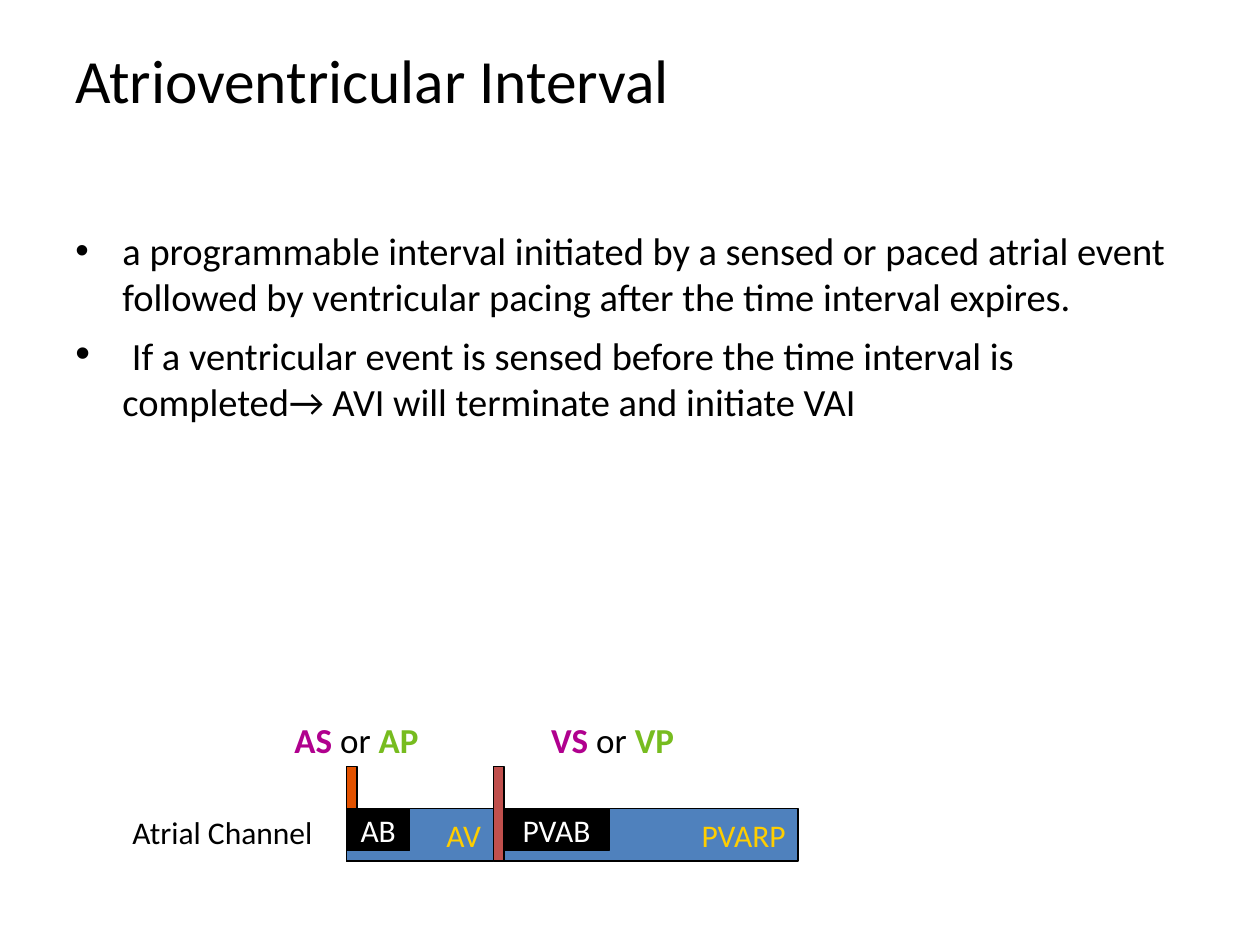
"""Build the atrioventricular interval slide with its atrial channel timing diagram."""
from lxml.etree import SubElement
from pptx import Presentation
from pptx.dml.color import RGBColor
from pptx.enum.shapes import MSO_SHAPE
from pptx.enum.text import MSO_ANCHOR, PP_ALIGN
from pptx.oxml.ns import qn
from pptx.util import Cm, Pt

COLORS = {
    "black": "000000", "white": "FFFFFF", "blue": "4F81BD", "yellow": "FFCE00",
    "orange": "E35200", "red": "C0504D", "purple": "B0008E", "green": "77BC1F",
}


def add_text(slide, left, top, width, height):
    box = slide.shapes.add_textbox(Cm(left), Cm(top), Cm(width), Cm(height))
    box.text_frame.word_wrap = True
    return box.text_frame


def write(para, spans, size, align=PP_ALIGN.LEFT):
    para.alignment = align
    para.font.name = "Calibri"
    para.font.size = Pt(size)
    for text, color, bold in spans:
        span = para.add_run()
        span.text = text
        span.font.bold = bold
        span.font.color.rgb = RGBColor.from_string(COLORS[color])


deck = Presentation()
deck.slide_width, deck.slide_height = Cm(25.4), Cm(19.05)
page = deck.slides.add_slide(deck.slide_layouts[6])

title = add_text(page, 1.27, 0.72, 22.86, 3.2)
write(title.paragraphs[0], [("Atrioventricular Interval", "black", False)], 35.1)

body = add_text(page, 1.27, 4.45, 22.86, 12.57)
points = [
    ["a programmable interval initiated by a sensed or paced atrial event "
     "followed by ventricular pacing after the time interval expires."],
    [" ", "If a ventricular event is sensed before the time interval is "
     "completed→ AVI will terminate and initiate VAI"],
]
for index, texts in enumerate(points):
    para = body.paragraphs[0] if index == 0 else body.add_paragraph()
    write(para, [(text, "black", False) for text in texts], 22)
    para.space_before = Pt(5 * index)
    properties = para._p.get_or_add_pPr()
    properties.set("marL", str(Cm(0.95)))
    properties.set("indent", str(Cm(-0.95)))
    bullet_font = SubElement(properties, qn("a:buFont"))
    bullet_font.set("typeface", "Arial")
    SubElement(properties, qn("a:buChar")).set("char", "•")
    properties.append(properties.find(qn("a:defRPr")))
body.paragraphs[1].runs[0].font.size = Pt(24)

atrial, ventricular, pulse = 6.99, 9.95, 0.21
bar_top, bar_height, blanking_height = 16.3, 1.06, 0.85
pulse_top, pulse_height = 15.45, 1.91
after_pulse = ventricular + pulse
blocks = [
    (after_pulse, bar_top, 5.93, bar_height, "blue", "PVARP", "yellow", PP_ALIGN.RIGHT),
    (atrial, pulse_top, pulse, pulse_height, "orange", "", "", None),
    (atrial, bar_top, 2.96, bar_height, "blue", "AV", "yellow", PP_ALIGN.RIGHT),
    (atrial, bar_top, 1.27, blanking_height, "black", "AB", "white", PP_ALIGN.CENTER),
    (after_pulse, bar_top, 2.12, blanking_height, "black", "PVAB", "white", PP_ALIGN.CENTER),
    (ventricular, pulse_top, pulse, pulse_height, "red", "", "", None),
]
for left, top, width, height, fill, label, color, align in blocks:
    block = page.shapes.add_shape(
        MSO_SHAPE.RECTANGLE, Cm(left), Cm(top), Cm(width), Cm(height))
    block.shadow.inherit = False
    block.fill.solid()
    block.fill.fore_color.rgb = RGBColor.from_string(COLORS[fill])
    block.line.color.rgb = RGBColor.from_string(COLORS["black"])
    block.line.width = Pt(0.75)
    if label:
        frame = block.text_frame
        frame.word_wrap = False
        frame.vertical_anchor = MSO_ANCHOR.MIDDLE
        write(frame.paragraphs[0], [(label, color, False)], 18, align)

channel = add_text(page, 1.9, 16.26, 4.65, 1.12)
write(channel.paragraphs[0], [("Atrial Channel", "black", False)], 18, PP_ALIGN.RIGHT)

for left, sensed, paced in [(5.21, "AS", "AP"), (10.36, "VS", "VP")]:
    event = add_text(page, left, 14.35, 3.48, 1.12)
    spans = [(f"{sensed} ", "purple", True), ("or ", "black", False), (paced, "green", True)]
    write(event.paragraphs[0], spans, 20, PP_ALIGN.RIGHT)

deck.save("out.pptx")
